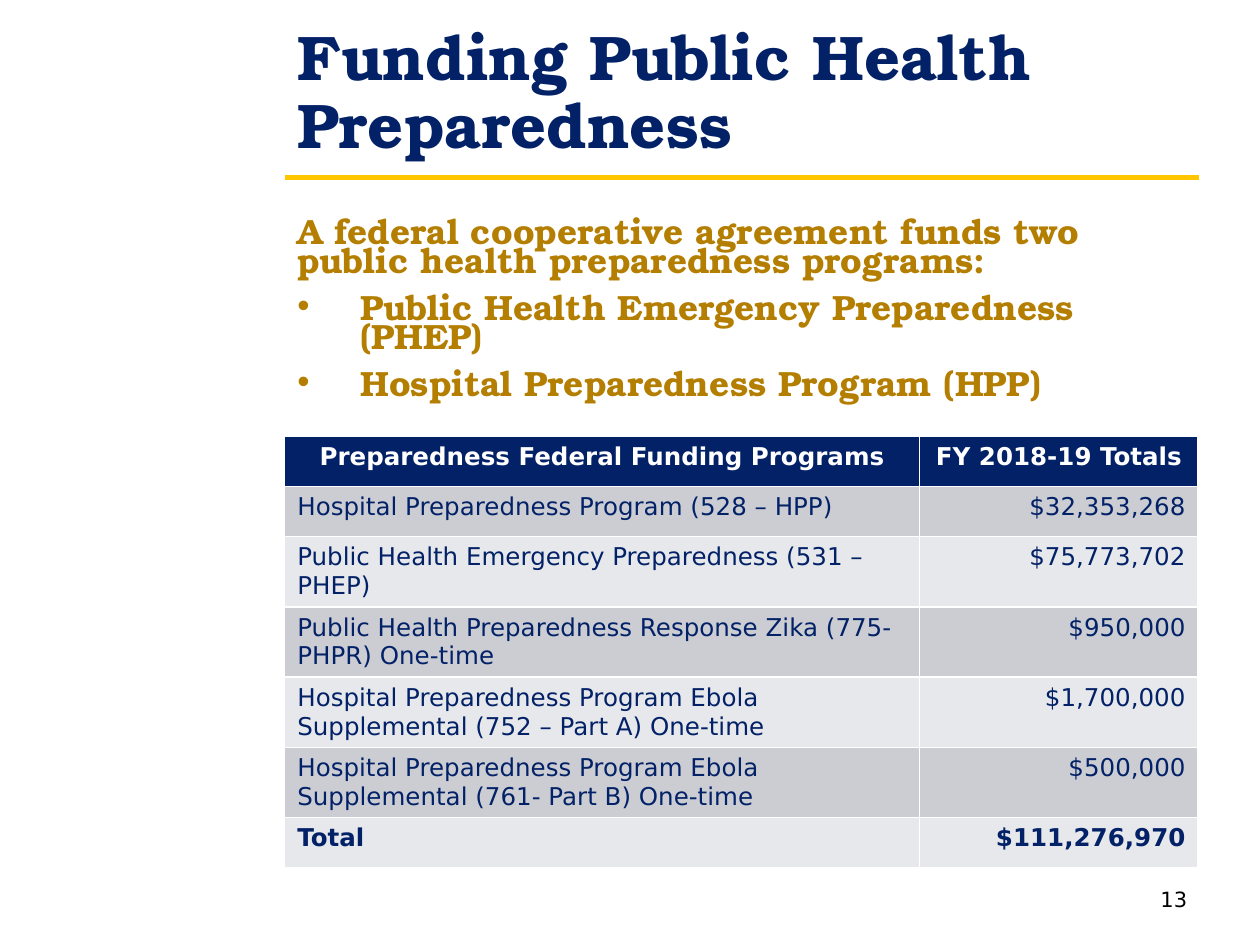
from dataclasses import dataclass

from lxml.etree import SubElement
from pptx import Presentation
from pptx.dml.color import RGBColor
from pptx.enum.shapes import MSO_CONNECTOR
from pptx.enum.text import MSO_ANCHOR, MSO_AUTO_SIZE, PP_ALIGN
from pptx.oxml.ns import qn
from pptx.util import Inches, Pt


@dataclass(frozen=True)
class Theme:
    navy: str = "022167"
    gold: str = "B47E00"
    yellow: str = "FFC600"
    white: str = "FFFFFF"
    black: str = "000000"
    bands: tuple = ("CCCDD3", "E7E8EB")
    serif: str = "TeX Gyre Bonum"
    sans: str = "DejaVu Sans"
    title_size: int = 36
    body_size: int = 20
    table_size: int = 14
    number_size: int = 12


theme = Theme()
LEFT, WIDTH = Inches(2.26), Inches(7.25)


def write(paragraph, text, *, font=theme.sans, size=theme.table_size,
          color=theme.navy, bold=False, align=PP_ALIGN.LEFT, spacing=None, before=0):
    paragraph.alignment = align
    paragraph.space_before = Pt(before)
    if spacing:
        paragraph.line_spacing = spacing
    run = paragraph.add_run()
    run.text = text
    run.font.name = font
    run.font.size = Pt(size)
    run.font.bold = bold
    run.font.color.rgb = RGBColor.from_string(color)


def set_bullet(paragraph, char=None, indent=0):
    """Give the paragraph a hanging bullet, or none when char is missing."""
    properties = paragraph._p.get_or_add_pPr()
    properties.set("marL", str(Inches(indent)))
    properties.set("indent", str(-Inches(indent)))
    if char:
        SubElement(properties, qn("a:buFont"), typeface="Arial")
        SubElement(properties, qn("a:buChar"), char=char)
    else:
        SubElement(properties, qn("a:buNone"))


prs = Presentation()
prs.slide_width, prs.slide_height = Inches(10), Inches(7.5)
slide = prs.slides.add_slide(prs.slide_layouts[1])
title, programs = slide.placeholders

# Title and rule
title.left, title.top, title.width, title.height = LEFT, Inches(0.47), WIDTH, Inches(0.87)
title.text_frame.auto_size = MSO_AUTO_SIZE.NONE
title.text_frame.vertical_anchor = MSO_ANCHOR.BOTTOM
write(title.text_frame.paragraphs[0], "Funding Public Health Preparedness",
      font=theme.serif, size=theme.title_size, bold=True, spacing=0.9)

rule = slide.shapes.add_connector(
    MSO_CONNECTOR.STRAIGHT, LEFT, Inches(1.41), Inches(9.52), Inches(1.41))
rule.line.color.rgb = RGBColor.from_string(theme.yellow)
rule.line.width = Pt(3)
SubElement(rule._element.spPr, qn("a:effectLst"))

# Programs list
programs.left, programs.top, programs.width, programs.height = (
    LEFT, Inches(1.7), WIDTH, Inches(1.59))
programs.text_frame.auto_size = MSO_AUTO_SIZE.NONE
program_lines = [
    "A federal cooperative agreement funds two public health preparedness programs:",
    "Public Health Emergency Preparedness (PHEP)",
    "Hospital Preparedness Program (HPP)",
]
for index, line in enumerate(program_lines):
    if index == 0:
        paragraph = programs.text_frame.paragraphs[0]
        set_bullet(paragraph)
    else:
        paragraph = programs.text_frame.add_paragraph()
        set_bullet(paragraph, "•", 0.5)
    write(paragraph, line, font=theme.serif, size=theme.body_size, color=theme.gold,
          bold=True, spacing=0.7, before=10 if index else 0)

# Funding table
funding_rows = [
    ("Preparedness Federal Funding Programs", "FY 2018-19 Totals"),
    ("Hospital Preparedness Program (528 – HPP)", "$32,353,268"),
    ("Public Health Emergency Preparedness (531 – PHEP)", "$75,773,702"),
    ("Public Health Preparedness Response Zika (775-PHPR) One-time", "$950,000"),
    ("Hospital Preparedness Program Ebola Supplemental (752 – Part A) One-time", "$1,700,000"),
    ("Hospital Preparedness Program Ebola Supplemental (761- Part B) One-time", "$500,000"),
    ("Total", "$111,276,970"),
]
row_height = Inches(0.4)
funding = slide.shapes.add_table(
    len(funding_rows), 2, LEFT, Inches(3.46), WIDTH, row_height * len(funding_rows)).table
funding.columns[0].width = Inches(5.04)
funding.columns[1].width = Inches(2.21)
last_row = len(funding_rows) - 1
for row, values in enumerate(funding_rows):
    is_header = row == 0
    for column, value in enumerate(values):
        cell = funding.cell(row, column)
        cell.fill.solid()
        cell.fill.fore_color.rgb = RGBColor.from_string(
            theme.navy if is_header else theme.bands[(row - 1) % 2])
        if is_header:
            align = PP_ALIGN.CENTER
        else:
            align = PP_ALIGN.RIGHT if column else PP_ALIGN.LEFT
        write(cell.text_frame.paragraphs[0], value, align=align,
              color=theme.white if is_header else theme.navy,
              bold=row in (0, last_row))

# Page number
page_number = slide.shapes.add_textbox(Inches(8.4), Inches(6.94), Inches(1.12), Inches(0.4))
page_number.text_frame.word_wrap = True
page_number.text_frame.vertical_anchor = MSO_ANCHOR.MIDDLE
write(page_number.text_frame.paragraphs[0], "13", size=theme.number_size,
      color=theme.black, align=PP_ALIGN.RIGHT)

prs.save("out.pptx")
